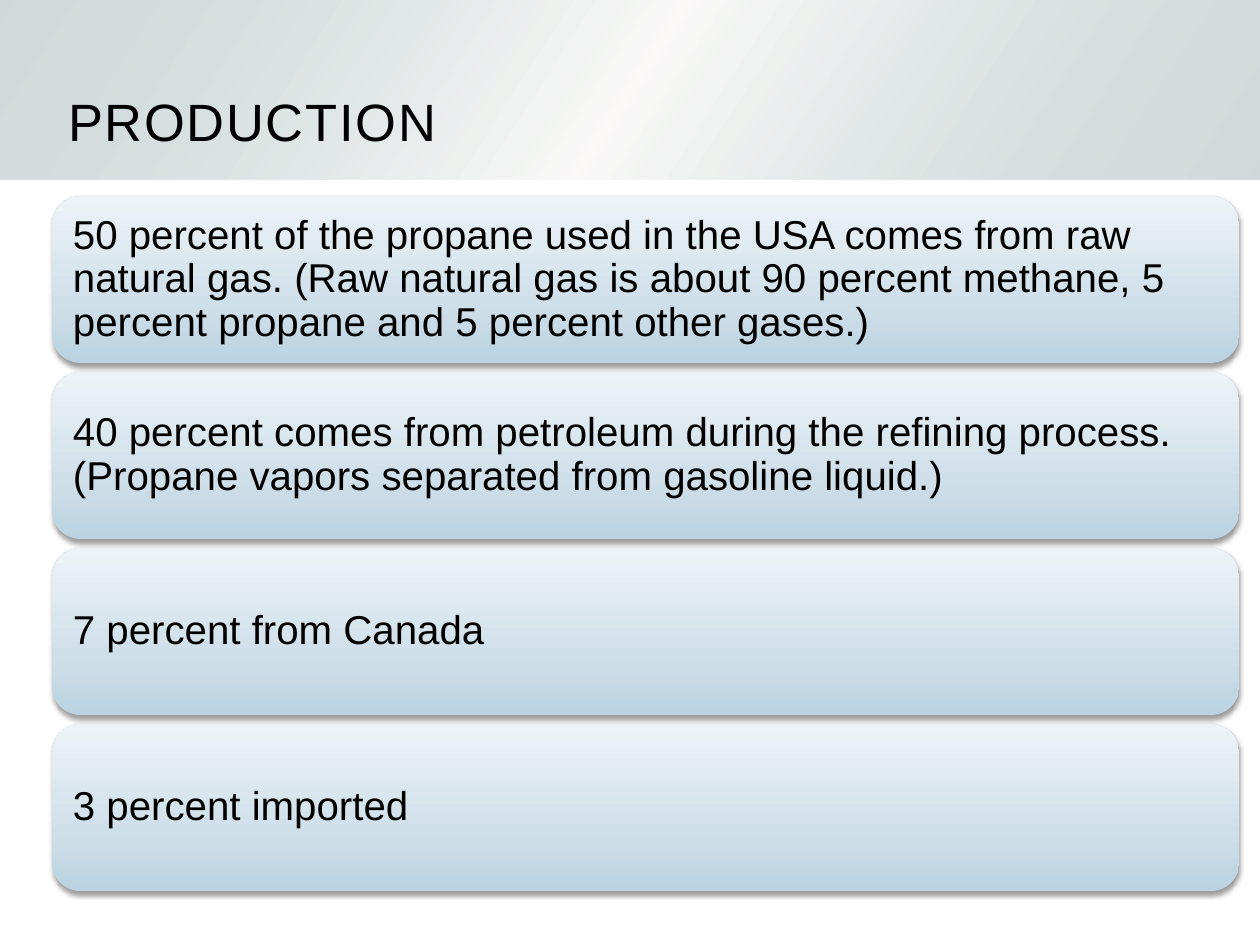
from dataclasses import dataclass

import pptx
import pptx.dml.color
import pptx.enum.shapes
import pptx.enum.text
import pptx.oxml
import pptx.oxml.ns
import pptx.util

Pt = pptx.util.Pt
qn = pptx.oxml.ns.qn
Anchor = pptx.enum.text.MSO_ANCHOR


@dataclass(frozen=True)
class Theme:
    font: str = "Arial"
    text: str = "000000"
    title_size: float = 30
    body_size: float = 23
    band_stops: tuple = ((0, "BEC9CB"), (15, "C2D0CF"), (30, "D5DDDC"), (50, "F7F6F5"),
                         (70, "D5DDDC"), (85, "C2D0CF"), (100, "BEC9CB"))
    card_stops: tuple = ((0, "BAD2E1"), (35, "CFDFE9"), (100, "ECF3F7"))


FACTS = (
    "50 percent of the propane used in the USA comes from raw natural gas. (Raw natural gas "
    "is about 90 percent methane, 5 percent propane and 5 percent other gases.)",
    "40 percent comes from petroleum during the refining process. "
    "(Propane vapors separated from gasoline liquid.)",
    "7 percent from Canada",
    "3 percent imported",
)


def write_text(shape, text, *, theme, size, anchor, inset, line_spacing=None, tracking=0):
    """Fill a shape with one left-aligned paragraph; tracking is in points."""
    frame = shape.text_frame
    frame.word_wrap = True
    frame.auto_size = pptx.enum.text.MSO_AUTO_SIZE.NONE
    frame.vertical_anchor = anchor
    frame.margin_left = frame.margin_right = Pt(inset)
    frame.margin_top = frame.margin_bottom = Pt(inset)
    para = frame.paragraphs[0]
    para.alignment = pptx.enum.text.PP_ALIGN.LEFT
    para.space_before = Pt(0)
    if line_spacing:
        para.line_spacing = line_spacing
    span = para.add_run()
    span.text = text
    span.font.name = theme.font
    span.font.size = Pt(size)
    span.font.color.rgb = pptx.dml.color.RGBColor.from_string(theme.text)
    if tracking:
        span.font._element.set("spc", str(tracking * 100))


def set_gradient(shape, stops, angle, opacity=100):
    """Give a linear gradient; the angle is in degrees clockwise."""
    shape.fill.gradient()
    stop_xml = "".join(
        f'<a:gs pos="{position * 1000}"><a:srgbClr val="{color}">'
        f'<a:alpha val="{opacity * 1000}"/></a:srgbClr></a:gs>'
        for position, color in stops)
    gradient = pptx.oxml.parse_xml(
        f'<a:gradFill {pptx.oxml.ns.nsdecls("a")} rotWithShape="1"><a:gsLst>{stop_xml}</a:gsLst>'
        f'<a:lin ang="{angle * 60000}" scaled="0"/></a:gradFill>')
    properties = shape.element.spPr
    properties.replace(properties.find(qn("a:gradFill")), gradient)


def set_soft_shadow(shape):
    shadow = pptx.oxml.parse_xml(
        f'<a:outerShdw {pptx.oxml.ns.nsdecls("a")} blurRad="{Pt(3.1)}" dist="{Pt(1.6)}" '
        'dir="5400000" rotWithShape="0">'
        '<a:srgbClr val="000000"><a:alpha val="38000"/></a:srgbClr></a:outerShdw>')
    shape.element.spPr.find(qn("a:effectLst")).append(shadow)


class SlideBuilder:
    def __init__(self, slide, theme):
        self.slide = slide
        self.theme = theme

    def plain_shape(self, kind, left, top, width, height):
        shape = self.slide.shapes.add_shape(kind, Pt(left), Pt(top), Pt(width), Pt(height))
        shape.line.fill.background()
        shape.shadow.inherit = False
        return shape

    def title(self, text, left, top, width, height):
        box = self.slide.shapes.title
        box.left, box.top, box.width, box.height = map(Pt, (left, top, width, height))
        write_text(box, text, theme=self.theme, size=self.theme.title_size,
                   anchor=Anchor.BOTTOM, inset=2.88, tracking=1)

    def header_band(self, width, height):
        """Draw the band across the top, behind the title."""
        band = self.plain_shape(pptx.enum.shapes.MSO_SHAPE.RECTANGLE, 0, 0, width, height)
        set_gradient(band, self.theme.band_stops, 33, opacity=70)
        self.slide.shapes.title.element.addprevious(band.element)

    def card(self, text, left, top, width, height):
        card = self.plain_shape(
            pptx.enum.shapes.MSO_SHAPE.ROUNDED_RECTANGLE, left, top, width, height)
        set_gradient(card, self.theme.card_stops, 270)
        set_soft_shadow(card)
        write_text(card, text, theme=self.theme, size=self.theme.body_size,
                   anchor=Anchor.MIDDLE, inset=7.2, line_spacing=0.9)


def main():
    deck = pptx.Presentation()
    deck.slide_width, deck.slide_height = Pt(720), Pt(540)
    page = SlideBuilder(deck.slides.add_slide(deck.slide_layouts.get_by_name("Title Only")),
                        Theme())
    page.header_band(720, 102.5)
    page.title("PRODUCTION", 36, 18, 648, 72)
    card_height, gap = 95.2, 5.4
    for index, fact in enumerate(FACTS):
        page.card(fact, 30, 112.2 + index * (card_height + gap), 678, card_height)
    deck.save("out.pptx")


if __name__ == "__main__":
    main()
